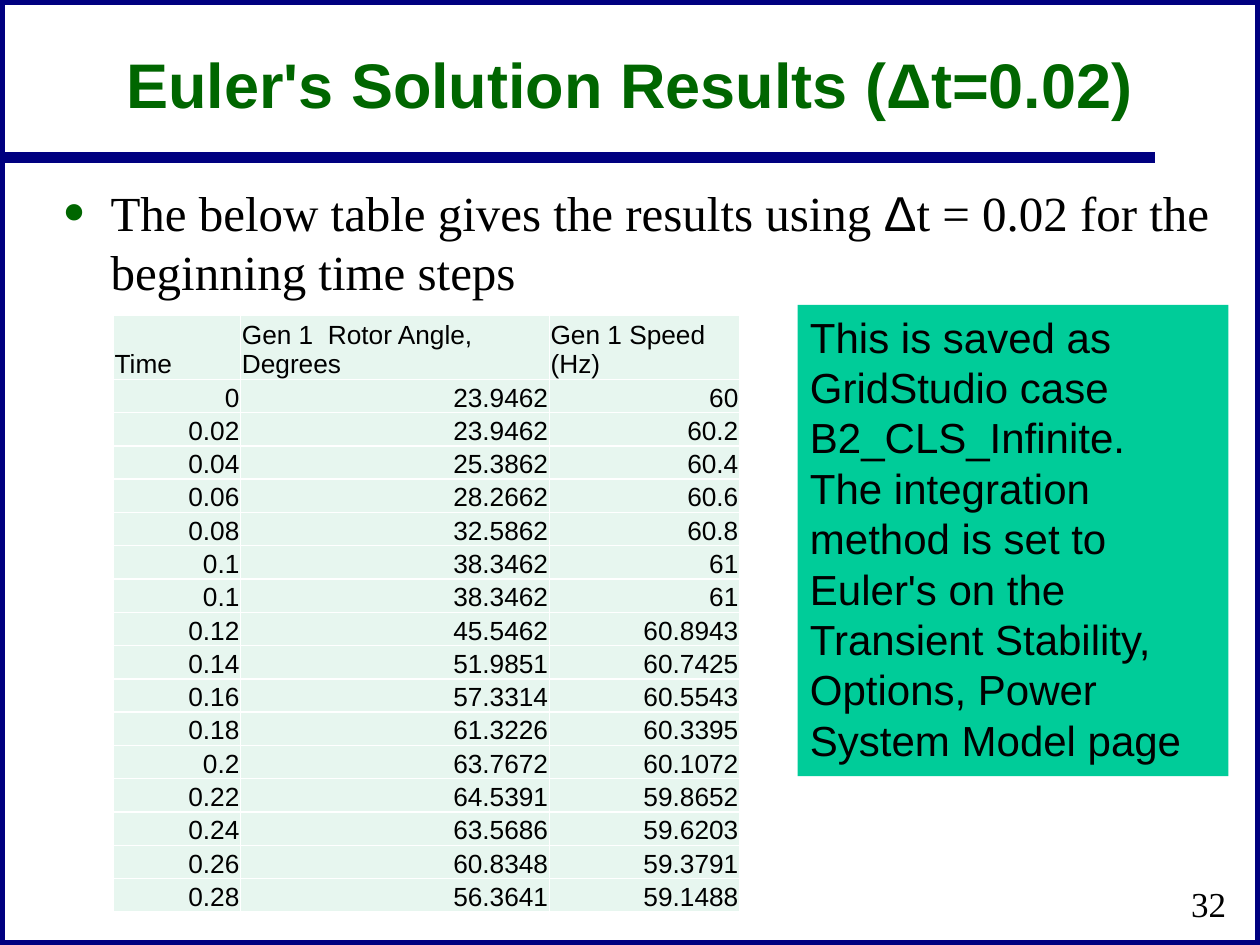
from lxml import etree
from pptx import Presentation
from pptx.dml.color import RGBColor
from pptx.enum.shapes import MSO_CONNECTOR, MSO_SHAPE
from pptx.enum.text import MSO_ANCHOR, PP_ALIGN
from pptx.oxml.ns import qn
from pptx.util import Inches, Pt

RECTANGLE = MSO_SHAPE.RECTANGLE
STRAIGHT = MSO_CONNECTOR.STRAIGHT
MIDDLE, BOTTOM = MSO_ANCHOR.MIDDLE, MSO_ANCHOR.BOTTOM
LEFT, CENTER, RIGHT = PP_ALIGN.LEFT, PP_ALIGN.CENTER, PP_ALIGN.RIGHT

COLORS = {
    "navy": "000080",
    "green": "006600",
    "teal": "00CC99",
    "mint": "E7F6EF",
    "white": "FFFFFF",
    "black": "000000",
}
SANS, SERIF = "Arial", "Times New Roman"


def add_run(paragraph, text, size, font_name, color="black", bold=False):
    run = paragraph.add_run()
    run.text = text
    run.font.size = Pt(size)
    run.font.name = font_name
    run.font.bold = bold
    run.font.color.rgb = RGBColor.from_string(COLORS[color])


def add_text_frame(slide, left, top, width, height):
    box = slide.shapes.add_textbox(Inches(left), Inches(top), Inches(width), Inches(height))
    box.text_frame.word_wrap = True
    return box.text_frame


presentation = Presentation()
presentation.slide_width = Inches(10)
presentation.slide_height = Inches(7.5)
slide = presentation.slides.add_slide(presentation.slide_layouts[6])

frame = slide.shapes.add_shape(RECTANGLE, 0, 0, Inches(10), Inches(7.5))
frame.shadow.inherit = False
frame.fill.background()

title_rule = slide.shapes.add_connector(STRAIGHT, 0, Inches(1.25), Inches(9.17), Inches(1.25))
etree.SubElement(title_rule._element.spPr, qn("a:effectLst"))

for outlined in (frame, title_rule):
    outlined.line.color.rgb = RGBColor.from_string(COLORS["navy"])
    outlined.line.width = Pt(6)

title = add_text_frame(slide, 0.75, 0.25, 8.5, 0.83)
title.vertical_anchor = MIDDLE
paragraph = title.paragraphs[0]
paragraph.alignment = CENTER
add_run(paragraph, "Euler's Solution Results (Δt=0.02)", 36, SANS, "green", True)

body = add_text_frame(slide, 0.4, 1.4, 9.34, 1.1)
paragraph = body.paragraphs[0]
properties = paragraph._p.get_or_add_pPr()
properties.set("marL", str(Inches(0.38)))
properties.set("indent", str(Inches(-0.38)))
bullet_color = etree.SubElement(properties, qn("a:buClr"))
etree.SubElement(bullet_color, qn("a:srgbClr"), val=COLORS["green"])
etree.SubElement(properties, qn("a:buSzPct"), val="140000")
etree.SubElement(properties, qn("a:buFont"), typeface=SERIF)
etree.SubElement(properties, qn("a:buChar"), char="•")
for text, font_name in (
    ("The below table gives the results using ", SERIF),
    ("Δ", SANS),
    ("t = 0.02 for the beginning time steps", SERIF),
):
    add_run(paragraph, text, 28, font_name)

slide_number = add_text_frame(slide, 7.75, 6.92, 2.08, 0.5)
slide_number.vertical_anchor = MIDDLE
paragraph = slide_number.paragraphs[0]
paragraph.alignment = RIGHT
add_run(paragraph, "32", 20, SERIF)

rows = [
    ("Time", "Gen 1  Rotor Angle, Degrees", "Gen 1 Speed (Hz)"),
    ("0", "23.9462", "60"),
    ("0.02", "23.9462", "60.2"),
    ("0.04", "25.3862", "60.4"),
    ("0.06", "28.2662", "60.6"),
    ("0.08", "32.5862", "60.8"),
    ("0.1", "38.3462", "61"),
    ("0.1", "38.3462", "61"),
    ("0.12", "45.5462", "60.8943"),
    ("0.14", "51.9851", "60.7425"),
    ("0.16", "57.3314", "60.5543"),
    ("0.18", "61.3226", "60.3395"),
    ("0.2", "63.7672", "60.1072"),
    ("0.22", "64.5391", "59.8652"),
    ("0.24", "63.5686", "59.6203"),
    ("0.26", "60.8348", "59.3791"),
    ("0.28", "56.3641", "59.1488"),
]
column_widths = (1.01, 2.45, 1.51)
header_height, data_height = 0.46, 4.23
table = slide.shapes.add_table(
    len(rows), len(column_widths), Inches(0.9), Inches(2.5),
    Inches(sum(column_widths)), Inches(header_height + data_height),
).table
for column, width in zip(table.columns, column_widths):
    column.width = Inches(width)

for row_index, values in enumerate(rows):
    is_header = row_index == 0
    table.rows[row_index].height = Inches(
        header_height if is_header else data_height / (len(rows) - 1)
    )
    for column_index, value in enumerate(values):
        cell = table.cell(row_index, column_index)
        cell.vertical_anchor = BOTTOM
        cell.margin_left = cell.margin_right = cell.margin_top = Inches(0.01)
        cell.margin_bottom = 0
        cell_properties = cell._tc.get_or_add_tcPr()
        for side in ("a:lnL", "a:lnR", "a:lnT", "a:lnB"):
            border = etree.SubElement(cell_properties, qn(side), w=str(Pt(1)))
            border_fill = etree.SubElement(border, qn("a:solidFill"))
            etree.SubElement(border_fill, qn("a:srgbClr"), val=COLORS["white"])
        cell.fill.solid()
        cell.fill.fore_color.rgb = RGBColor.from_string(COLORS["mint"])
        paragraph = cell.text_frame.paragraphs[0]
        paragraph.alignment = LEFT if is_header else RIGHT
        add_run(paragraph, value, 15, SANS)

note = slide.shapes.add_shape(RECTANGLE, Inches(6.33), Inches(2.42), Inches(3.42), Inches(3.74))
note.shadow.inherit = False
note.fill.solid()
note.fill.fore_color.rgb = RGBColor.from_string(COLORS["teal"])
note.line.fill.background()
note_text = note.text_frame
note_text.word_wrap = True
note_text.vertical_anchor = MSO_ANCHOR.TOP
note_paragraphs = (
    ("This is saved as",),
    (
        "GridStudio case",
        "B2_CLS_Infinite.",
        "The integration",
        "method is set to",
        "Euler's on the Transient Stability,",
        "Options, Power System Model page",
    ),
)
for paragraph_index, lines in enumerate(note_paragraphs):
    paragraph = note_text.add_paragraph() if paragraph_index else note_text.paragraphs[0]
    paragraph.alignment = LEFT
    for line_index, line in enumerate(lines):
        if line_index:
            paragraph.add_line_break()
        add_run(paragraph, line, 24, SANS)

presentation.save("out.pptx")
